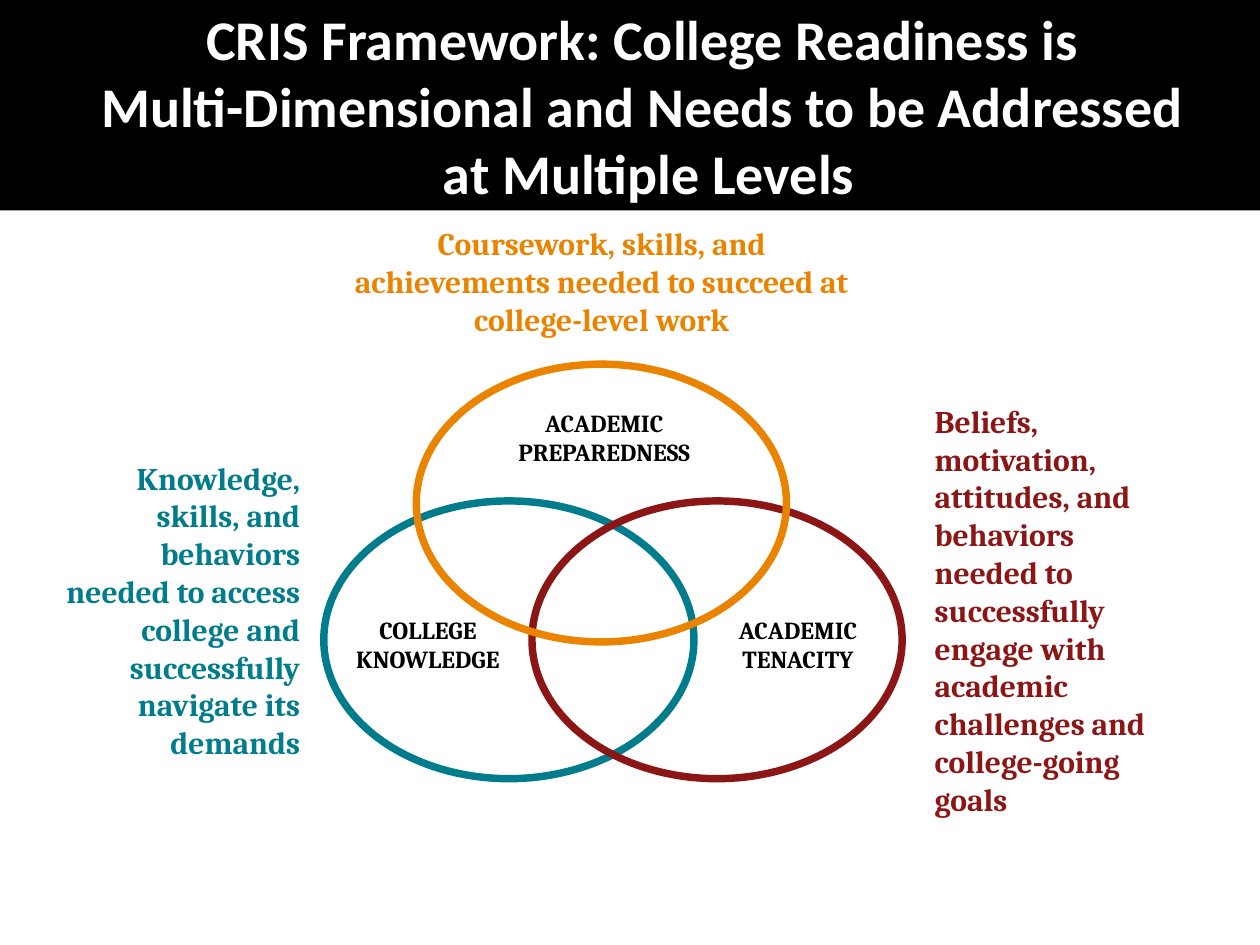
import pptx
import pptx.util
import pptx.dml.color
import pptx.enum.shapes
import pptx.enum.text

RGBColor = pptx.dml.color.RGBColor
Align = pptx.enum.text.PP_ALIGN
Anchor = pptx.enum.text.MSO_ANCHOR
Shape = pptx.enum.shapes.MSO_SHAPE

BLACK = RGBColor(0x00, 0x00, 0x00)
WHITE = RGBColor(0xFF, 0xFF, 0xFF)
TEAL = RGBColor(0x00, 0x7C, 0x8C)
CARDINAL = RGBColor(0x8C, 0x15, 0x15)
ORANGE = RGBColor(0xE9, 0x83, 0x00)

# The slide is a grid of 100 columns by 75 rows; boxes are left, top, width, height.
CELL = pptx.util.Inches(0.1)


def within(box, shares):
    """Turn shares of a box into a box on the grid."""
    left, top, width, height = box
    x, y, w, h = shares
    return left + x * width, top + y * height, w * width, h * height


def emu(box):
    return [round(n * CELL) for n in box]


def add_text(shapes, box, text, size=18, color=BLACK, font="Cambria",
             align=Align.CENTER, anchor=Anchor.TOP):
    tf = shapes.add_textbox(*emu(box)).text_frame
    tf.word_wrap = True
    tf.vertical_anchor = anchor
    tf.text = text
    for p in tf.paragraphs:
        p.alignment = align
        for r in p.runs:
            r.font.name = font
            r.font.size = pptx.util.Pt(size)
            r.font.bold = True
            r.font.color.rgb = color


def add_header(slide, box):
    sp = slide.shapes.add_shape(Shape.RECTANGLE, *emu(box))
    sp.shadow.inherit = False
    sp.fill.solid()
    sp.fill.fore_color.rgb = BLACK
    sp.line.fill.background()
    title = ("CRIS Framework: College Readiness is \v"
             "Multi-Dimensional and Needs to be Addressed \v"
             "at Multiple Levels")
    add_text(slide.shapes, within(box, (0.03, 0.05, 0.97, 0.9)), title, size=32,
             color=WHITE, font="Calibri", anchor=Anchor.MIDDLE)


def add_venn(slide, box):
    shapes = slide.shapes.add_group_shape().shapes
    rings = [(0, 0.33, TEAL), (0.36, 0.33, CARDINAL), (0.16, 0, ORANGE)]
    for x, y, color in rings:
        sp = shapes.add_shape(Shape.OVAL, *emu(within(box, (x, y, 0.64, 0.67))))
        sp.shadow.inherit = False
        sp.fill.background()
        sp.line.color.rgb = color
        sp.line.width = pptx.util.Pt(4.25)
    labels = [
        ("ACADEMIC PREPAREDNESS", 0.28, 0.09, 0.41),
        ("ACADEMIC TENACITY", 0.62, 0.59, 0.4),
        ("COLLEGE\nKNOWLEDGE", 0, 0.59, 0.36),
    ]
    for text, x, y, w in labels:
        add_text(shapes, within(box, (x, y, w, 0.17)), text, size=14)


def add_captions(slide):
    captions = [
        ((26.5, 17.3, 42.5, 10.1), ORANGE, Align.CENTER,
         "Coursework, skills, and achievements needed to succeed at "
         "college-level work"),
        ((73.2, 31.4, 21.7, 34.3), CARDINAL, Align.LEFT,
         "Beliefs, motivation, attitudes, and behaviors needed to successfully "
         "engage with academic challenges and college-going goals"),
        ((4, 35.9, 20.8, 28.3), TEAL, Align.RIGHT,
         "Knowledge, skills, and behaviors needed to access college and "
         "successfully navigate its demands"),
    ]
    for box, color, align, text in captions:
        add_text(slide.shapes, box, text, color=color, align=align)


def main():
    prs = pptx.Presentation()
    prs.slide_width, prs.slide_height = 100 * CELL, 75 * CELL
    slide = prs.slides.add_slide(prs.slide_layouts[6])
    add_header(slide, (0, 0, 100, 16.7))
    add_venn(slide, (25.7, 28.9, 45.9, 32.9))
    add_captions(slide)
    prs.save("out.pptx")


if __name__ == "__main__":
    main()
